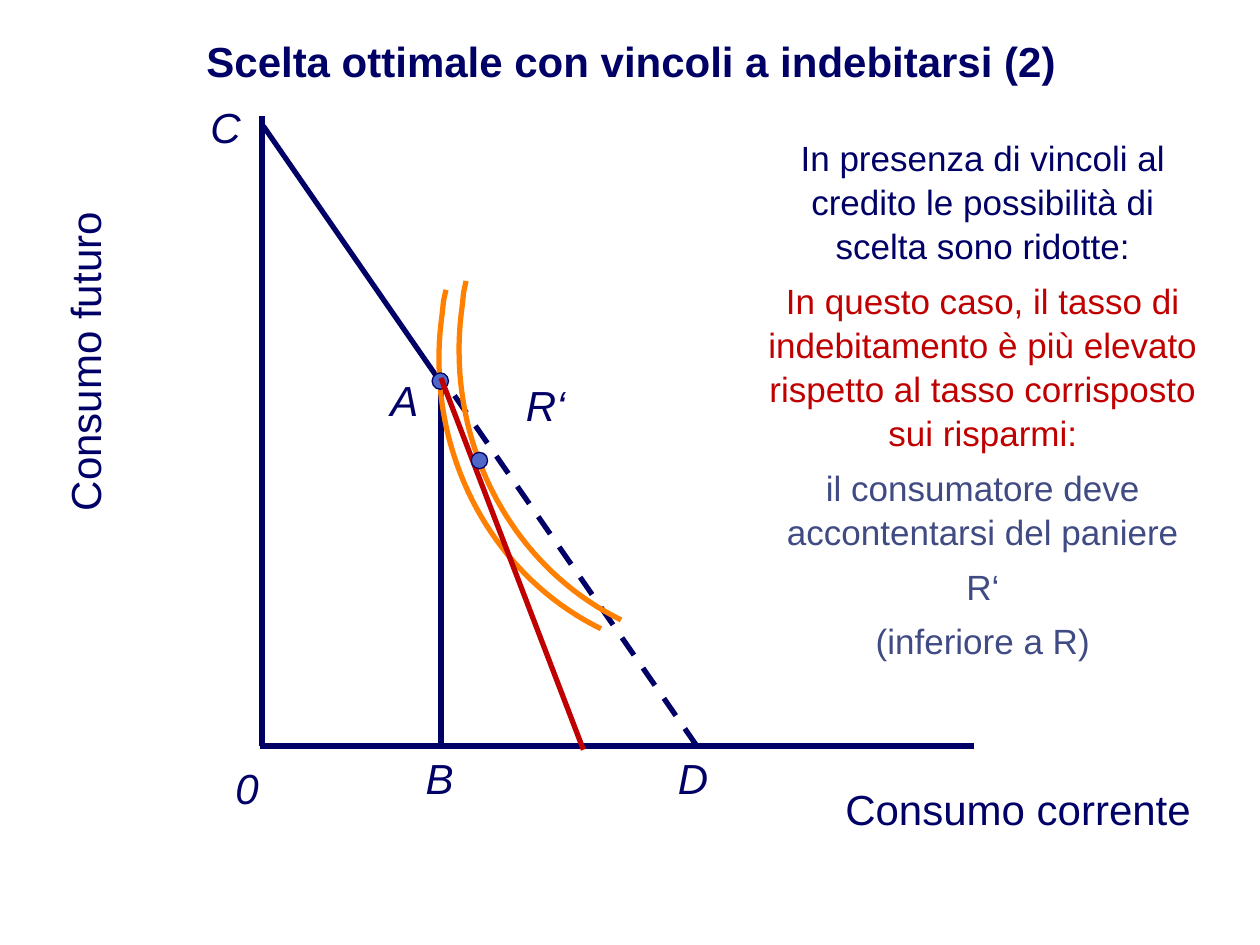
from lxml import etree
from pptx import Presentation
from pptx import util as u
from pptx.dml.color import RGBColor
from pptx.enum import dml, shapes, text
from pptx.oxml.ns import qn

COLORS = {"navy": "000066", "orange": "FF7F00", "red": "C00000",
          "dot": "4E67C8", "slate": "404A83"}
COLORS = {name: RGBColor.from_string(value) for name, value in COLORS.items()}

presentation = Presentation()
presentation.slide_width, presentation.slide_height = u.Inches(10), u.Inches(7.5)
slide = presentation.slides.add_slide(presentation.slide_layouts[6])

# Every length below is counted in cells of a 100 x 75 grid.
CELL = presentation.slide_width // 100


def add_text(box, paragraphs, size=24, bold=False, italic=False, spacing=1.0,
             align=text.PP_ALIGN.CENTER):
    """Add a text box from (wording, colour) pairs and return it."""
    shape = slide.shapes.add_textbox(*(int(n * CELL) for n in box))
    frame = shape.text_frame
    frame.word_wrap = True
    frame.auto_size = text.MSO_AUTO_SIZE.SHAPE_TO_FIT_TEXT
    for index, (wording, color) in enumerate(paragraphs):
        paragraph = frame.add_paragraph() if index else frame.paragraphs[0]
        paragraph.alignment = align
        paragraph.line_spacing = spacing
        paragraph.space_before = u.Pt(6 if index else 0)
        run = paragraph.add_run()
        run.text = wording
        run.font.name, run.font.size = "Arial", u.Pt(size)
        run.font.bold, run.font.italic = bold, italic
        run.font.color.rgb = COLORS[color]
    return shape


def add_line(start, end, color="navy", dash=None):
    line = slide.shapes.add_connector(
        shapes.MSO_CONNECTOR.STRAIGHT, *(int(n * CELL) for n in start + end))
    line.line.color.rgb = COLORS[color]
    line.line.width = u.Pt(3)
    if dash:
        line.line.dash_style = dash
    etree.SubElement(line._element.spPr, qn("a:effectLst"))


# Title and axis names
title = add_text((0.3, 2.9, 99.6, 3.9),
                 [("Scelta ottimale con vincoli a indebitarsi (2)", "navy")], bold=True)
title.text_frame.auto_size = text.MSO_AUTO_SIZE.NONE
title.text_frame.vertical_anchor = text.MSO_ANCHOR.MIDDLE
future = add_text((-12, 26.2, 37.4, 5), [("Consumo futuro", "navy")])
future.rotation = 270
add_text((63.3, 61.7, 35, 5), [("Consumo corrente", "navy")])

# Axes and budget line; the stretch beyond the endowment A is dashed
BASE = 59.2
add_line((55.3, BASE), (34.9, 29.7), dash=dml.MSO_LINE.DASH)
add_line((34.6, 29.8), (20.9, 10))
add_line((20.8, 9.2), (20.8, BASE))
add_line((20.6, BASE), (77.3, BASE))
add_line((35, 30.1), (35, BASE))

# Point labels
for label, left, top in [("0", 16.7, 60), ("D", 52.1, BASE), ("C", 15, 7.6),
                         ("A", 29.2, 29.2), ("R‘", 40.4, 29.6)]:
    add_text((left, top, 5.8, 5), [(label, "navy")], italic=True)
add_text((32.8, BASE, 6.3, 5), [("B", "navy")], italic=True, align=text.PP_ALIGN.LEFT)

# Explanation
add_text((59.9, 10.2, 36.2, 41.4), [
    ("In presenza di vincoli al credito le possibilità di scelta sono ridotte:", "navy"),
    ("In questo caso, il tasso di indebitamento è più elevato rispetto al tasso "
     "corrisposto sui risparmi:", "red"),
    ("il consumatore deve accontentarsi del paniere", "slate"),
    ("R‘", "slate"),
    ("(inferiore a R)", "slate"),
], size=20, spacing=1.05)

# Two parallel indifference curves: a short start, then one cubic Bezier arc,
# each followed by the point it passes through
ARC = [(35.1, 24.9), (33.6, 35.3), (38.7, 45.5), (47.7, 49.9)]
START = [(35.4, 23), (35.2, 23.9)]
STEPS = 40
DOT = 1.3
for shift_x, shift_y, dot_left, dot_top in [(0, 0, 34.3, 29.6), (1.6, -0.7, 37.4, 35.9)]:
    points = list(START)
    for step in range(STEPS + 1):
        t = step / STEPS
        weights = ((1 - t) ** 3, 3 * t * (1 - t) ** 2, 3 * t ** 2 * (1 - t), t ** 3)
        points.append(tuple(sum(w * p[axis] for w, p in zip(weights, ARC))
                            for axis in (0, 1)))
    points = [(int((x + shift_x) * CELL), int((y + shift_y) * CELL)) for x, y in points]
    builder = slide.shapes.build_freeform(*points[0])
    builder.add_line_segments(points[1:], close=False)
    curve = builder.convert_to_shape()
    curve.shadow.inherit = False
    curve.fill.background()
    curve.line.color.rgb = COLORS["orange"]
    curve.line.width = u.Pt(3)

    if shift_x:
        add_line((35, 30), (46.3, 59.5), "red")
    dot = slide.shapes.add_shape(shapes.MSO_SHAPE.OVAL, *(
        int(n * CELL) for n in (dot_left, dot_top, DOT, DOT)))
    dot.shadow.inherit = False
    dot.fill.solid()
    dot.fill.fore_color.rgb = COLORS["dot"]
    dot.line.color.rgb = COLORS["navy"]
    dot.line.width = u.Pt(0.75)

presentation.save("out.pptx")
